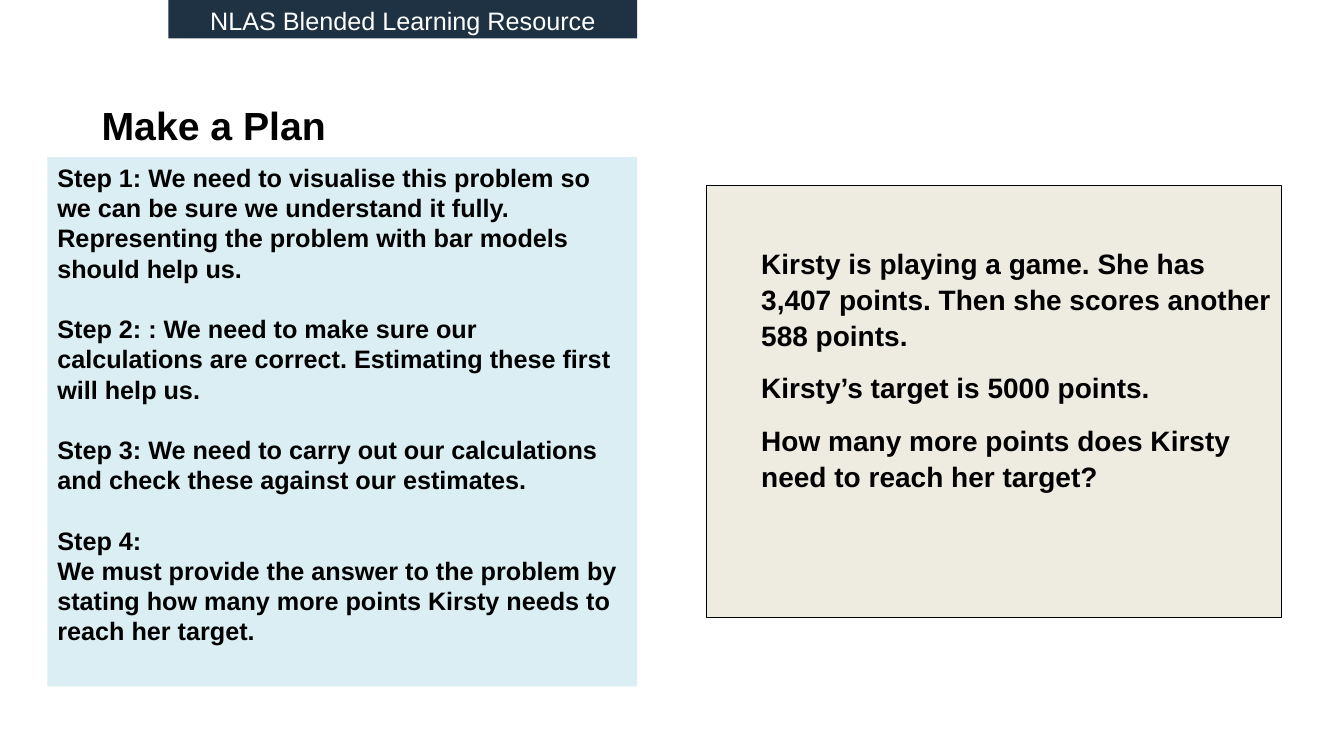
from dataclasses import dataclass

from pptx import Presentation
from pptx.dml.color import RGBColor
from pptx.enum import shapes, text
from pptx.util import Inches, Pt


@dataclass(frozen=True)
class Theme:
    font: str = "Arial"
    ink: str = "000000"
    white: str = "FFFFFF"
    navy: str = "1F3244"
    pale_blue: str = "DBEEF4"
    cream: str = "EEECE1"
    title: int = 28
    problem: int = 20
    body: int = 18


THEME = Theme()

STEPS = [
    ["Step 1: We need to visualise this problem so we can be sure we understand it fully. "
     "Representing the problem with bar models should help us."],
    ["Step 2: : We need to make sure our calculations are correct. "
     "Estimating these first will help us."],
    ["Step 3: We need to carry out our calculations and check these against our estimates."],
    ["Step 4:",
     "We must provide the answer to the problem by stating how many more points "
     "Kirsty needs to reach her target."],
]
PROBLEM = [
    "Kirsty is playing a game. She has 3,407 points. Then she scores another 588 points.",
    "Kirsty’s target is 5000 points.",
    "How many more points does Kirsty need to reach her target?",
]


def write(tf, lines, size, color=THEME.ink, bold=True, align=text.PP_ALIGN.LEFT):
    tf.word_wrap = True
    tf.text = "\n".join(lines)
    for p in tf.paragraphs:
        p.alignment = align
        for r in p.runs:
            r.font.name = THEME.font
            r.font.size = Pt(size)
            r.font.bold = bold
            r.font.color.rgb = RGBColor.from_string(color)


def add_panel(s, box, fill, line=None):
    sp = s.shapes.add_shape(shapes.MSO_SHAPE.RECTANGLE, *map(Inches, box))
    sp.shadow.inherit = False
    sp.fill.solid()
    sp.fill.fore_color.rgb = RGBColor.from_string(fill)
    if line:
        sp.line.color.rgb = RGBColor.from_string(line)
        sp.line.width = Pt(0.75)
    else:
        sp.line.fill.background()
    tf = sp.text_frame
    tf.vertical_anchor = text.MSO_ANCHOR.TOP
    return tf


def add_title(s, box):
    tf = s.shapes.add_textbox(*map(Inches, box)).text_frame
    write(tf, ["Make a Plan"], THEME.title)
    tf.vertical_anchor = text.MSO_ANCHOR.MIDDLE


def add_banner(s, box):
    tf = add_panel(s, box, THEME.navy)
    write(tf, ["NLAS Blended Learning Resource"], THEME.body, THEME.white,
          bold=False, align=text.PP_ALIGN.CENTER)


def add_steps(s, box):
    tf = add_panel(s, box, THEME.pale_blue)
    write(tf, [line for step in STEPS for line in step], THEME.body)
    for p in tf.paragraphs[1:]:
        if p.text.startswith("Step"):
            p.space_before = Pt(21.6)


def add_problem(s, box):
    tf = add_panel(s, box, THEME.cream, THEME.ink)
    tf.margin_left = Inches(0.54)
    tf.margin_top = Inches(0.58)
    write(tf, PROBLEM, THEME.problem)
    for i, p in enumerate(tf.paragraphs):
        p.line_spacing = 1.07
        p.space_after = Pt(8)
        p.space_before = Pt(4 if i else 0)


def main():
    prs = Presentation()
    prs.slide_width, prs.slide_height = Inches(13.33), Inches(7.5)
    s = prs.slides.add_slide(prs.slide_layouts[6])
    add_title(s, (0.91, 0.92, 9, 0.64))
    add_steps(s, (0.47, 1.56, 5.85, 5.25))
    add_banner(s, (1.67, 0, 4.65, 0.38))
    add_problem(s, (7.01, 1.84, 5.7, 4.29))
    prs.save("out.pptx")


if __name__ == "__main__":
    main()
